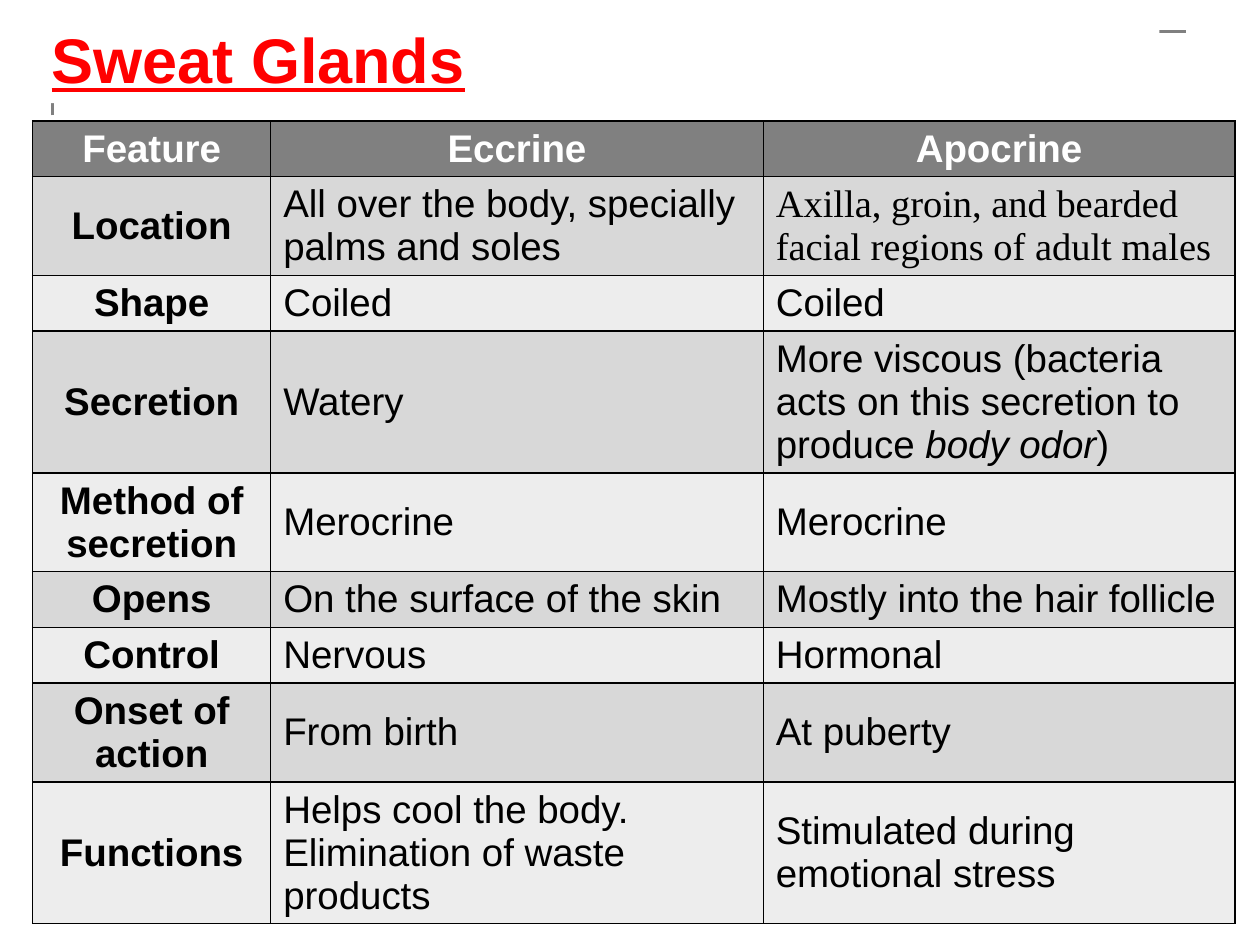
import pptx
import pptx.util
import pptx.dml.color
import pptx.enum.shapes
import pptx.enum.text
import pptx.oxml
import pptx.oxml.ns

Pt = pptx.util.Pt
ALIGN = pptx.enum.text.PP_ALIGN
SANS, SERIF = "Arial", "Times New Roman"
GREY, DARK, LIGHT = "808080", "D8D8D8", "EDEDED"

WIDTHS = [136, 281.5, 269.5]
HEAD = ["Feature", "Eccrine", "Apocrine"]
# Feature, eccrine, apocrine, lines of text in the row
ROWS = [
    ("Location", "All over the body, specially palms and soles",
     "Axilla, groin, and bearded facial regions of adult males", 2),
    ("Shape", "Coiled", "Coiled", 1),
    ("Secretion", "Watery",
     ["More viscous (bacteria acts on this secretion to produce ",
      ("body odor", True), ")"], 3),
    ("Method of secretion", "Merocrine", "Merocrine", 2),
    ("Opens", "On the surface of the skin", "Mostly into the hair follicle", 1),
    ("Control", "Nervous", "Hormonal", 1),
    ("Onset of action", "From birth", "At puberty", 2),
    ("Functions", "Helps cool the body. Elimination of waste products",
     "Stimulated during emotional stress", 3),
]


def color(text):
    return pptx.dml.color.RGBColor.from_string(text)


def paint(item, shade):
    item.fill.solid()
    item.fill.fore_color.rgb = color(shade)


def add_run(para, text, size, shade, face=SANS, bold=False, slant=False):
    run = para.add_run()
    run.text = text
    font = run.font
    font.name, font.size = face, Pt(size)
    font.bold, font.italic = bold, slant
    font.color.rgb = color(shade)
    return run


def add_frame(slide):
    """Thin corner line that shows around the title."""
    left, top, right, low = 30, 18, 678, 66
    pen = slide.shapes.build_freeform(Pt(left), Pt(low))
    pen.add_line_segments([(Pt(left), Pt(top)), (Pt(right), Pt(top))], close=False)
    shape = pen.convert_to_shape()
    shape.shadow.inherit = False
    shape.fill.background()
    shape.line.color.rgb = color(GREY)
    shape.line.width = Pt(1.5)


def add_title(slide, text):
    kind = pptx.enum.shapes.MSO_SHAPE.RECTANGLE
    shape = slide.shapes.add_shape(kind, Pt(22.5), Pt(8), Pt(640), Pt(51))
    shape.shadow.inherit = False
    paint(shape, "FFFFFF")
    shape.line.fill.background()
    frame = shape.text_frame
    frame.word_wrap = True
    frame.vertical_anchor = pptx.enum.text.MSO_ANCHOR.TOP
    para = frame.paragraphs[0]
    para.alignment = ALIGN.LEFT
    add_run(para, text, 36, "FF0000", bold=True).font.underline = True


def add_edges(cell):
    props = cell._tc.get_or_add_tcPr()
    space = pptx.oxml.ns.nsdecls("a")
    for spot, side in enumerate(("lnL", "lnR", "lnT", "lnB")):
        edge = pptx.oxml.parse_xml(
            f'<a:{side} {space} w="{Pt(1)}"><a:solidFill>'
            f'<a:srgbClr val="000000"/></a:solidFill></a:{side}>')
        props.insert(spot, edge)


def fill_cell(cell, parts, back, shade="000000", face=SANS, bold=False):
    paint(cell, back)
    add_edges(cell)
    cell.vertical_anchor = pptx.enum.text.MSO_ANCHOR.MIDDLE
    para = cell.text_frame.paragraphs[0]
    para.alignment = ALIGN.CENTER if bold else ALIGN.LEFT
    for part in [parts] if isinstance(parts, str) else parts:
        text, slant = (part, False) if isinstance(part, str) else part
        add_run(para, text, 22, shade, face, bold, slant)


def add_grid(slide):
    lines = [1] + [row[-1] for row in ROWS]
    highs = [7.2 + 24.6 * count for count in lines]
    table = slide.shapes.add_table(
        len(highs), len(WIDTHS), Pt(18.7), Pt(69.1),
        Pt(sum(WIDTHS)), Pt(sum(highs))).table
    for col, width in zip(table.columns, WIDTHS):
        col.width = Pt(width)
    for row, high in zip(table.rows, highs):
        row.height = Pt(high)
    # Header row
    for col, text in enumerate(HEAD):
        fill_cell(table.cell(0, col), text, GREY, "FFFFFF", bold=True)
    # Banded body rows
    for num, row in enumerate(ROWS, 1):
        back = DARK if num % 2 else LIGHT
        for col, parts in enumerate(row[:-1]):
            face = SERIF if (num, col) == (1, 2) else SANS
            fill_cell(table.cell(num, col), parts, back, face=face, bold=col == 0)


def main():
    deck = pptx.Presentation()
    deck.slide_width, deck.slide_height = Pt(720), Pt(540)
    slide = deck.slides.add_slide(deck.slide_layouts[6])
    add_frame(slide)
    add_grid(slide)
    add_title(slide, "Sweat Glands")
    deck.save("out.pptx")


if __name__ == "__main__":
    main()
